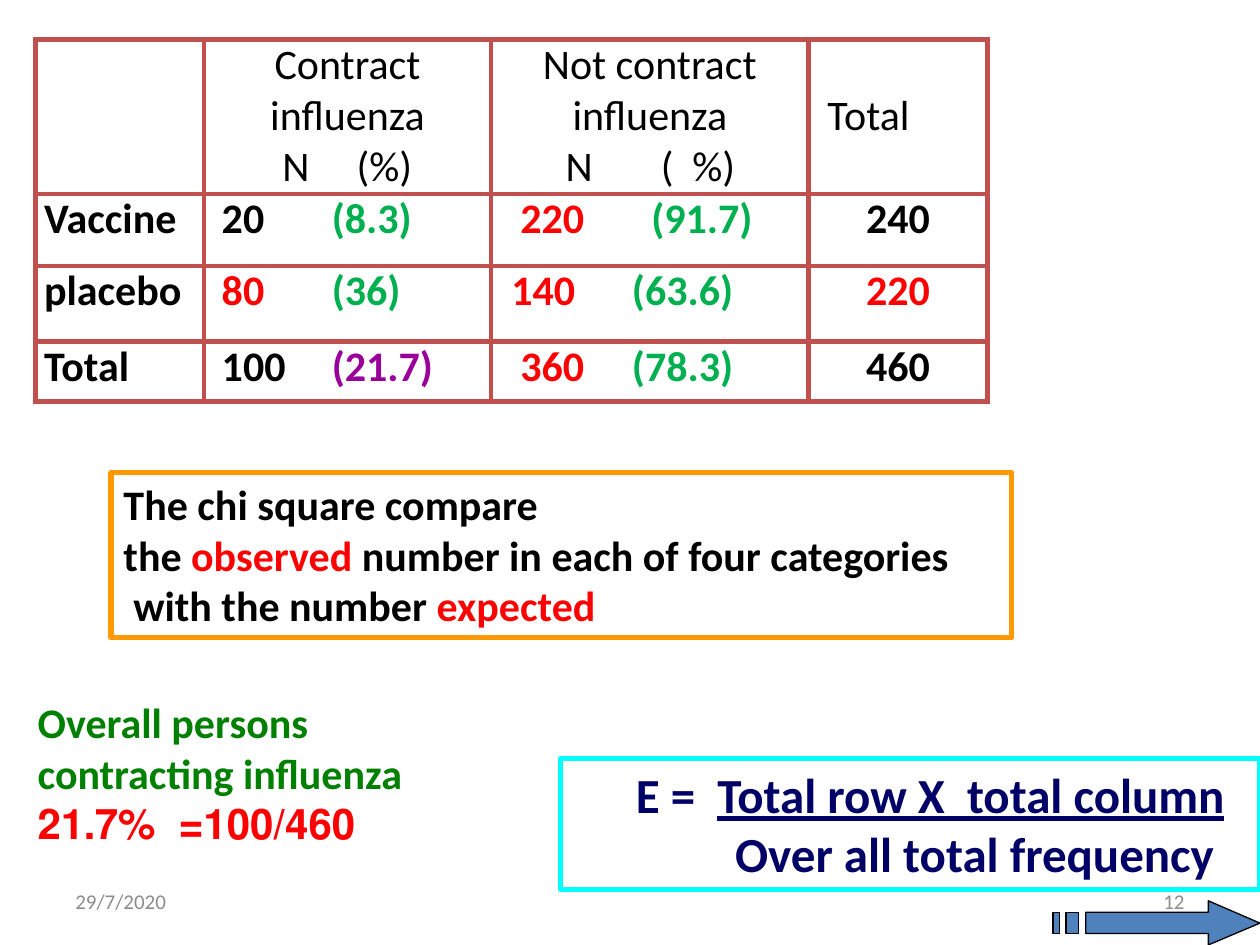
from typing import NamedTuple

from lxml import etree
from pptx import Presentation
from pptx.dml.color import RGBColor
from pptx.enum.shapes import MSO_SHAPE
from pptx.enum.text import MSO_ANCHOR, PP_ALIGN
from pptx.oxml.ns import qn
from pptx.util import Cm, Pt

RECT = MSO_SHAPE.RECTANGLE
LEFT, MID, RIGHT = PP_ALIGN.LEFT, PP_ALIGN.CENTER, PP_ALIGN.RIGHT
TOP, CENTER = MSO_ANCHOR.TOP, MSO_ANCHOR.MIDDLE
FONT = "Calibri"
BLACK, WHITE, RED, GREEN = "000000", "FFFFFF", "FF0000", "00B050"
PURPLE, NAVY, LEAF, GRAY = "990099", "000066", "008000", "8C8C8C"
BRICK, ORANGE, CYAN, BLUE = "C0504D", "FF9900", "00FFFF", "4F81BD"


class Pair(NamedTuple):
    """A count and its share, set at two tab stops (cm)."""
    count: str
    share: str
    color: str
    tint: str
    stops: tuple


class Box(NamedTuple):
    left: float
    top: float
    width: float
    height: float
    line: str = ""
    anchor: object = TOP


def paint(color: str) -> RGBColor:
    return RGBColor.from_string(color)


def say(para, text: str, size=24, color=BLACK, bold=False, under=False):
    run = para.add_run()
    run.text = text
    font = run.font
    font.name, font.size = FONT, Pt(size)
    font.bold, font.underline = bold, under
    font.color.rgb = paint(color)


def start(frame, first=False, align=LEFT, indent=0.0, stops=()):
    """Open a paragraph with its alignment, indent and tab stops."""
    para = frame.paragraphs[0] if first else frame.add_paragraph()
    para.alignment = align
    props = para._p.get_or_add_pPr()
    if indent:
        props.set("marL", str(Cm(indent)))
        props.set("indent", "0")
    if stops:
        tabs = etree.SubElement(props, qn("a:tabLst"))
        for stop in stops:
            etree.SubElement(tabs, qn("a:tab"), pos=str(Cm(stop)), algn="l")
    return para


def frame_of(slide, box: Box):
    place = [Cm(n) for n in box[:4]]
    if box.line:
        shape = slide.shapes.add_shape(RECT, *place)
        shape.shadow.inherit = False
        shape.fill.background()
        shape.line.color.rgb = paint(box.line)
        shape.line.width = Pt(3)
    else:
        shape = slide.shapes.add_textbox(*place)
    frame = shape.text_frame
    frame.word_wrap = True
    frame.vertical_anchor = box.anchor
    return frame


def edge(cell, color: str, width: float):
    props = cell._tc.get_or_add_tcPr()
    for spot, side in enumerate(("lnL", "lnR", "lnT", "lnB")):
        line = etree.Element(qn("a:" + side), w=str(Pt(width)))
        fill = etree.SubElement(line, qn("a:solidFill"))
        etree.SubElement(fill, qn("a:srgbClr"), val=color)
        props.insert(spot, line)


def put_pair(frame, pair: Pair, first=True, bold=True):
    para = start(frame, first, stops=pair.stops)
    say(para, "\t" + pair.count, color=pair.color, bold=bold)
    say(para, "\t" + pair.share, color=pair.tint, bold=bold)


# Table content
COLS = (3.4, 5.79, 6.4, 3.61)
ROWS = (3.12, 1.45, 1.52, 1.22)
NEAR = (0.18, 2.4)
HEADS = (
    ("Contract influenza", Pair("N", "(%)", BLACK, BLACK, (1.4, 2.9))),
    ("Not contract influenza", Pair("N", "(  %)", BLACK, BLACK, (1.32, 3.24))),
)
BODY = (
    ("Vaccine", Pair("20", "(8.3)", BLACK, GREEN, NEAR),
     Pair("220", "(91.7)", RED, GREEN, (0.41, 3.05)), "240", BLACK),
    ("placebo", Pair("80", "(36)", RED, GREEN, NEAR),
     Pair("140", "(63.6)", RED, GREEN, (0.23, 2.66)), "220", RED),
    ("Total", Pair("100", "(21.7)", BLACK, PURPLE, NEAR),
     Pair("360", "(78.3)", RED, GREEN, (0.41, 2.66)), "460", BLACK),
)


def draw_table(slide):
    table = slide.shapes.add_table(
        len(ROWS), len(COLS), Cm(0.71), Cm(0.79),
        Cm(sum(COLS)), Cm(sum(ROWS))).table
    table.first_row = table.horz_banding = False
    for col, width in zip(table.columns, COLS):
        col.width = Cm(width)
    for row, height in zip(table.rows, ROWS):
        row.height = Cm(height)
    for cell in table.iter_cells():
        cell.margin_left = cell.margin_right = Cm(0.18)
        cell.margin_top = cell.margin_bottom = 0
        cell.fill.solid()
        cell.fill.fore_color.rgb = paint(WHITE)
        edge(cell, BRICK, 3)

    # Header row
    for col, (head, pair) in enumerate(HEADS, 1):
        frame = table.cell(0, col).text_frame
        say(start(frame, True, MID), head)
        put_pair(frame, pair, False, False)
    last = table.cell(0, 3)
    last.vertical_anchor = CENTER
    say(start(last.text_frame, True, indent=0.2), "Total")

    # Body rows
    for row, (name, sick, well, total, color) in enumerate(BODY, 1):
        cells = [table.cell(row, col).text_frame for col in range(len(COLS))]
        say(start(cells[0], True), name, bold=True)
        put_pair(cells[1], sick)
        put_pair(cells[2], well)
        say(start(cells[3], True, MID), total, color=color, bold=True)


def draw_notes(slide):
    # What the test compares
    frame = frame_of(slide, Box(2.24, 9.53, 18.16, 3.33, ORANGE))
    say(start(frame, True), "The chi square compare", bold=True)
    para = start(frame)
    say(para, "the ", bold=True)
    say(para, "observed ", color=RED, bold=True)
    say(para, "number in each of four categories", bold=True)
    para = start(frame, indent=0.2)
    say(para, "with the number ", bold=True)
    say(para, "expected", color=RED, bold=True)

    # Overall rate, its last line running right to left
    frame = frame_of(slide, Box(0.51, 13.92, 10.11, 3.33))
    say(start(frame, True), "Overall persons", color=LEAF, bold=True)
    say(start(frame), "contracting influenza", color=LEAF, bold=True)
    para = start(frame)
    para._p.get_or_add_pPr().set("rtl", "1")
    say(para, "100/460=  21.7%", color=RED, bold=True)


def draw_arrow(slide):
    low, high = 18.39, 18.82
    bars = [[(a, low), (a, high), (b, high), (b, low)]
            for a, b in ((21.49, 21.74), (21.23, 21.36))]
    head = [(24.36, 18.16), (24.36, low), (21.89, low), (21.89, high),
            (24.36, high), (24.36, 19.05), (25.4, 18.61)]
    path = None
    for part in [head] + bars:
        spots = [(Cm(x), Cm(y)) for x, y in part]
        if path is None:
            path = slide.shapes.build_freeform(*spots[0], scale=1.0)
        else:
            path.move_to(*spots[0])
        path.add_line_segments(spots[1:], close=True)
    arrow = path.convert_to_shape()
    arrow.shadow.inherit = False
    arrow.fill.solid()
    arrow.fill.fore_color.rgb = paint(BLUE)
    arrow.line.color.rgb = paint(BLACK)
    arrow.line.width = Pt(0.75)


def draw_rule(slide):
    frame = frame_of(slide, Box(11.3, 15.29, 14.1, 2.64, CYAN))
    para = start(frame, True, indent=1.27)
    say(para, "E =  ", 28, NAVY, True)
    say(para, "Total row X  total column", 28, NAVY, True, True)
    say(start(frame, indent=3.27), "Over all total frequency", 28, NAVY, True)


def draw_foot(slide):
    for left, text, align in ((1.27, "29/7/2020", LEFT), (18.21, "12", RIGHT)):
        frame = frame_of(slide, Box(left, 17.65, 5.92, 1.02, anchor=CENTER))
        say(start(frame, True, align), text, 12, GRAY)


def main():
    deck = Presentation()
    deck.slide_width, deck.slide_height = Cm(25.4), Cm(19.05)
    slide = deck.slides.add_slide(deck.slide_layouts[6])
    for draw in (draw_table, draw_notes, draw_arrow, draw_rule, draw_foot):
        draw(slide)
    deck.save("out.pptx")


if __name__ == "__main__":
    main()
